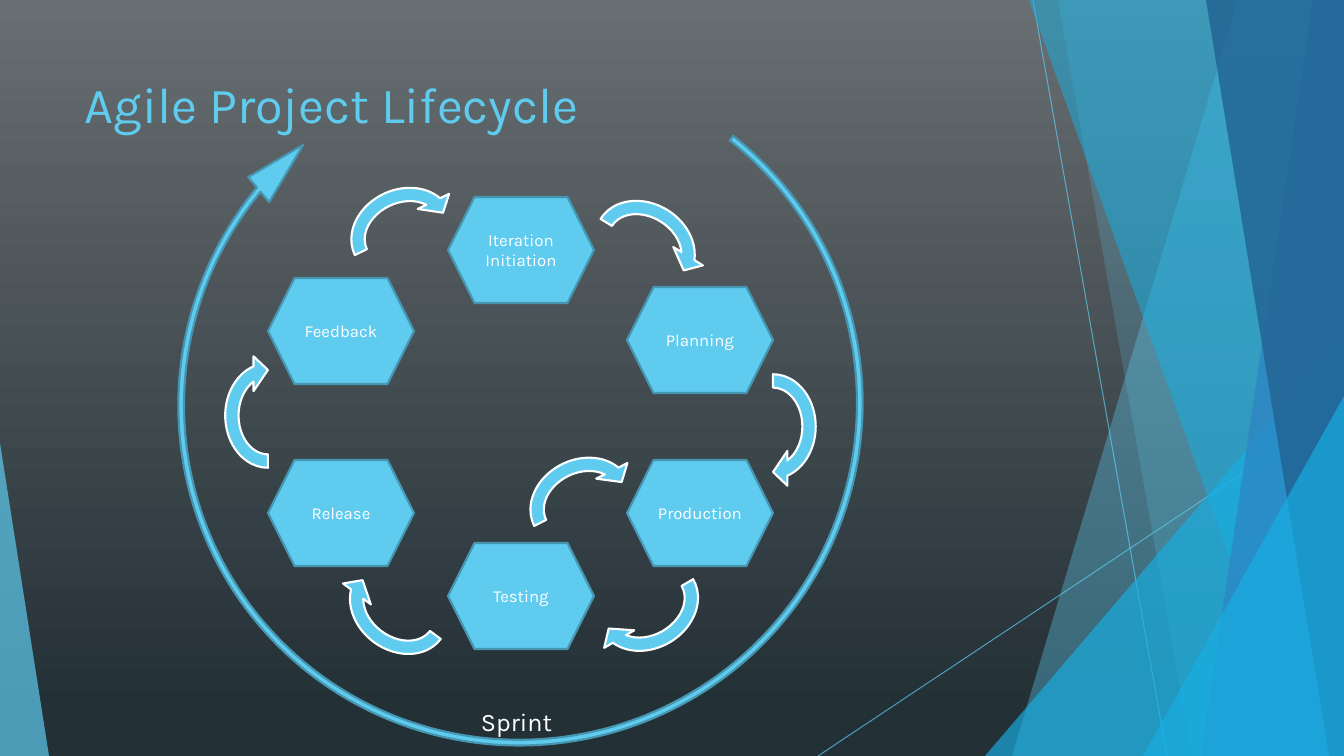
from lxml import etree
from pptx import Presentation
from pptx import util as u
from pptx.dml.color import RGBColor
from pptx.enum import shapes, text
from pptx.oxml import ns

WIDTH, HEIGHT = 1344, 756
SCALE = 914400 / 100.8
FONT = "Karla"
COLORS = {
    "sky": "5FCBEF", "cyan": "17B0E4", "blue": "2E83C3", "navy": "226292",
    "edge": "4696B1", "white": "FFFFFF", "top": "686E71", "bottom": "233036",
}

TITLE = ("Agile Project Lifecycle", (75, 68, 948, 145))
CAPTION = ("Sprint", (466, 702, 101, 39))

RAYS = [((1033, 0), (1167, 756)), ((1344, 406), (818, 756))]
FACETS = [
    ("band", (1238, 1012), "sky", 36),
    ("band", (1058, 1192), "sky", 20),
    ("triangle", (985, 336, 359, 420, 1), "cyan", 66),
    ("band", (1029, 1301), "cyan", 50),
    ("band", (1313, 1201), "blue", 70),
    ("band", (1206, 1329), "navy", 80),
    ("triangle", (1143, 396, 201, 360, 1), "cyan", 66),
    ("triangle", (0, 443, 49, 313, 0), "sky", 70),
]

STAGE_SIZE = (146, 106)
COLUMNS = (268, 448, 627)
STAGES = [
    ("Iteration\nInitiation", 1, 197), ("Planning", 2, 287), ("Production", 2, 460),
    ("Testing", 1, 543), ("Release", 0, 460), ("Feedback", 0, 278),
]

TURN_SIZE = (126, 107)
TURN_BEND = (0.125, 11.423, 204.577, 108, 0.163)
TURNS = [
    (582, 193, 31.8), (710, 373, 90), (585, 552, 149.7), (336, 554, 217),
    (205, 362, 270), (339, 179, 334.4), (518, 449, 333.4),
]
SPRINT_BOX = (166, 48, 709, 712)
SPRINT_BEND = (0.008, 6.442, 203.707, 41.175, 0.023)
SPRINT_ROTATION = 239.8


def px(*lengths):
    return [round(length * SCALE) for length in lengths]


def rgb(name):
    return RGBColor.from_string(COLORS[name])


def set_alpha(color_format_parent, percent):
    color = color_format_parent.find(".//" + ns.qn("a:srgbClr"))
    etree.SubElement(color, ns.qn("a:alpha")).set("val", str(percent * 1000))


def paint(shape, fill, line=None, alpha=None):
    shape.shadow.inherit = False
    shape.fill.solid()
    shape.fill.fore_color.rgb = rgb(fill)
    if alpha:
        set_alpha(shape.fill._xPr, alpha)
    if line:
        shape.line.color.rgb = rgb(line)
        shape.line.width = u.Pt(1.5)
    else:
        shape.line.fill.background()


def write(shape, words, size, color="white", align=text.PP_ALIGN.CENTER,
          anchor=text.MSO_ANCHOR.MIDDLE):
    frame = shape.text_frame
    frame.word_wrap = True
    frame.vertical_anchor = anchor
    frame.text = words
    for paragraph in frame.paragraphs:
        paragraph.alignment = align
        for run in paragraph.runs:
            run.font.name = FONT
            run.font.size = u.Pt(size)
            run.font.color.rgb = rgb(color)


def add_ray(slide, start, end):
    ray = slide.shapes.add_connector(shapes.MSO_CONNECTOR.STRAIGHT, *px(*start, *end))
    ray.line.color.rgb = rgb("sky")
    ray.line.width = u.Pt(0.75)
    properties = ray._element.spPr
    set_alpha(properties, 70)
    etree.SubElement(properties, ns.qn("a:effectLst"))


def add_facet(slide, kind, geometry, color, alpha):
    if kind == "band":
        top_left, bottom_left = geometry
        builder = slide.shapes.build_freeform(top_left, 0, scale=SCALE)
        builder.add_line_segments([(WIDTH, 0), (WIDTH, HEIGHT), (bottom_left, HEIGHT)])
        facet = builder.convert_to_shape()
    else:
        *box, peak = geometry
        facet = slide.shapes.add_shape(shapes.MSO_SHAPE.ISOSCELES_TRIANGLE, *px(*box))
        facet.adjustments[0] = peak
    paint(facet, color, alpha=alpha)


def add_turn(slide, box, bend, rotation, line):
    turn = slide.shapes.add_shape(shapes.MSO_SHAPE.CIRCULAR_ARROW, *px(*box))
    for index, value in enumerate(bend):
        turn.adjustments[index] = value
    turn.rotation = rotation
    paint(turn, "sky", line)


def main():
    presentation = Presentation()
    presentation.slide_width, presentation.slide_height = px(WIDTH, HEIGHT)
    slide = presentation.slides.add_slide(presentation.slide_layouts[6])

    background = slide.background.fill
    background.gradient()
    background.gradient_angle = 270
    for stop, color, position in zip(background.gradient_stops, ("top", "bottom"), (0, 0.94)):
        stop.color.rgb = rgb(color)
        stop.position = position

    for start, end in RAYS:
        add_ray(slide, start, end)
    for facet in FACETS:
        add_facet(slide, *facet)

    words, box = TITLE
    write(slide.shapes.add_textbox(*px(*box)), words, size=36, color="sky",
          align=text.PP_ALIGN.LEFT, anchor=text.MSO_ANCHOR.TOP)

    for words, column, top in STAGES:
        stage = slide.shapes.add_shape(
            shapes.MSO_SHAPE.HEXAGON, *px(COLUMNS[column], top, *STAGE_SIZE))
        paint(stage, "sky", "edge")
        write(stage, words, size=12)

    for left, top, rotation in TURNS:
        add_turn(slide, (left, top, *TURN_SIZE), TURN_BEND, rotation, "white")
    add_turn(slide, SPRINT_BOX, SPRINT_BEND, SPRINT_ROTATION, "edge")

    words, box = CAPTION
    write(slide.shapes.add_textbox(*px(*box)), words, size=18)

    presentation.save("out.pptx")


if __name__ == "__main__":
    main()
